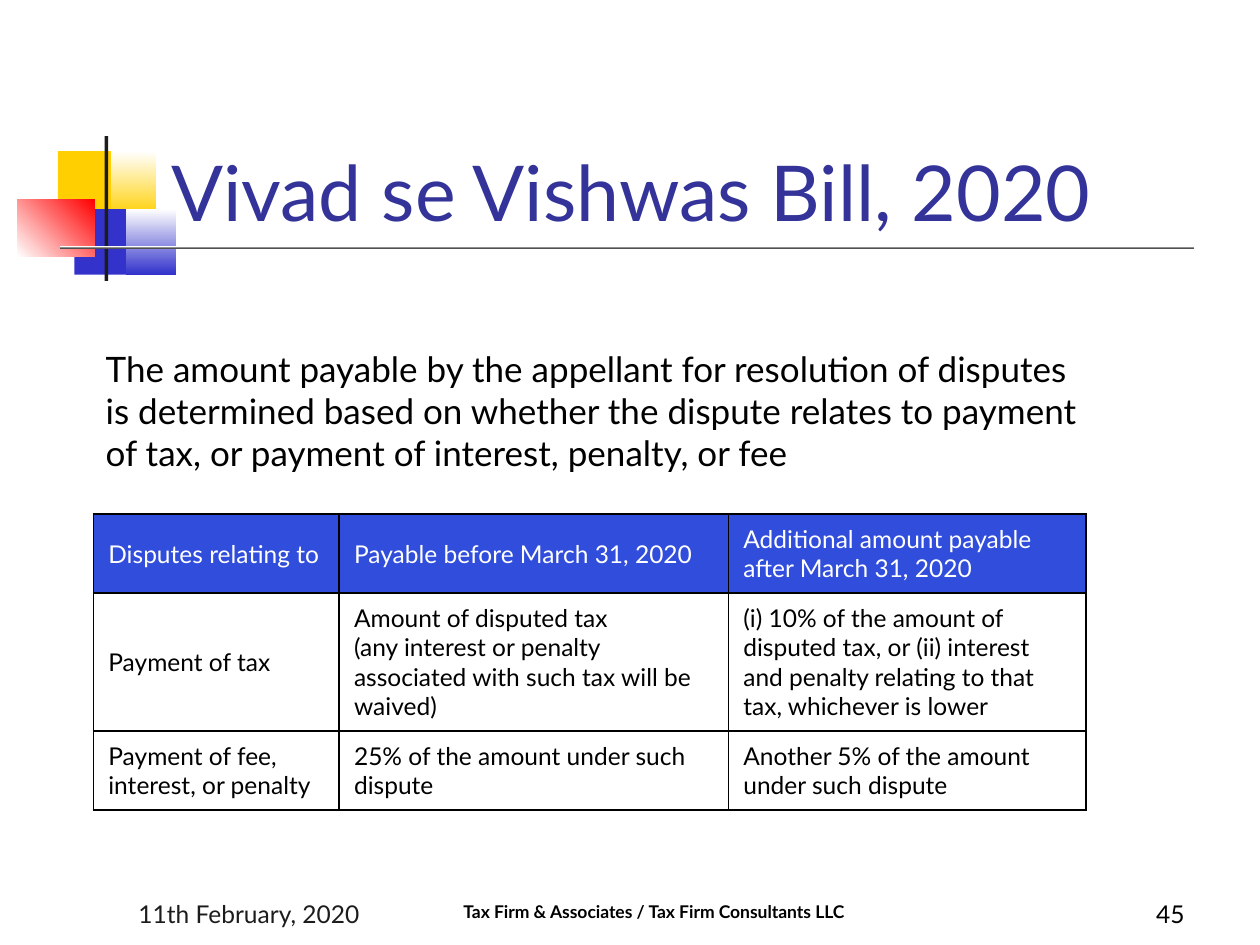
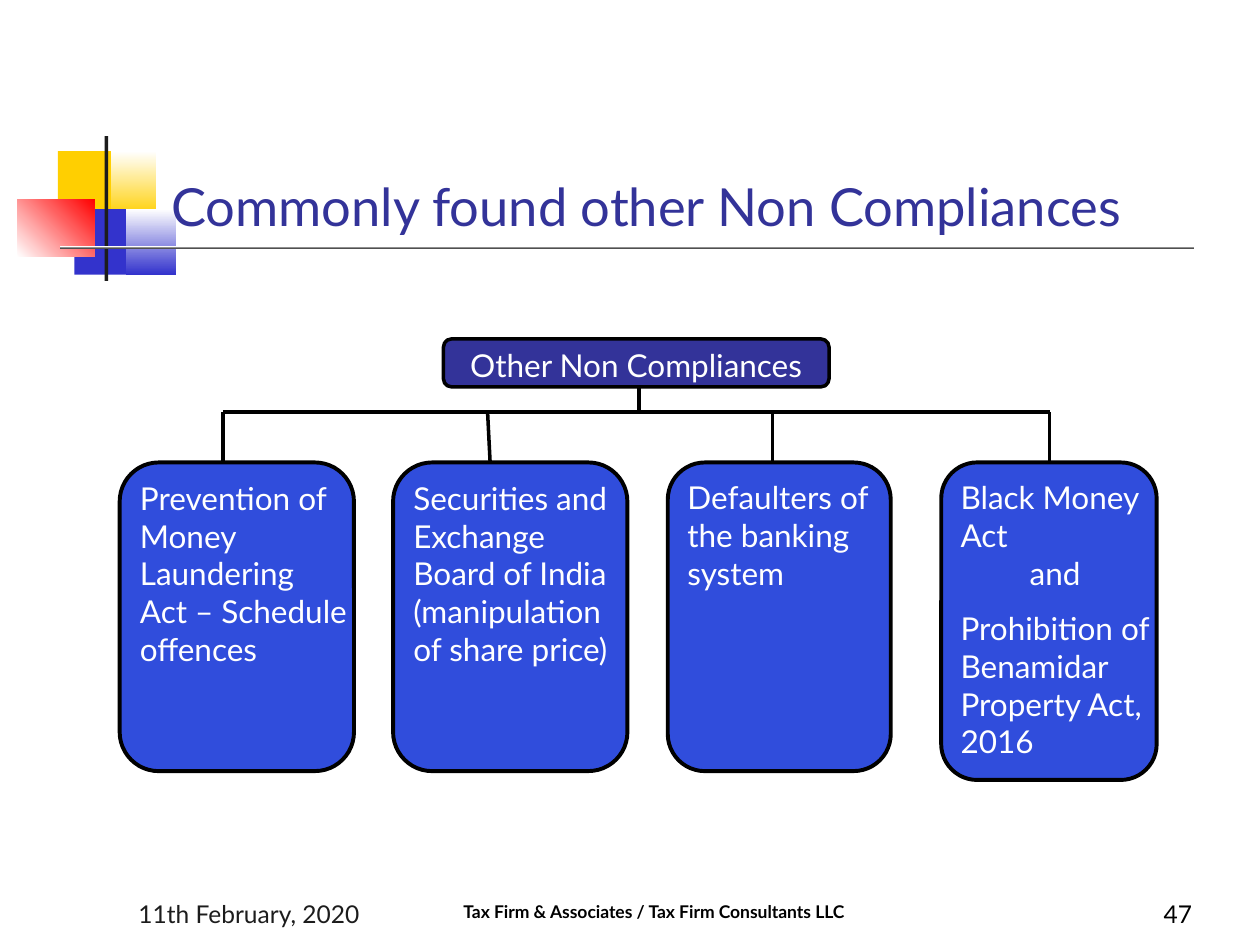
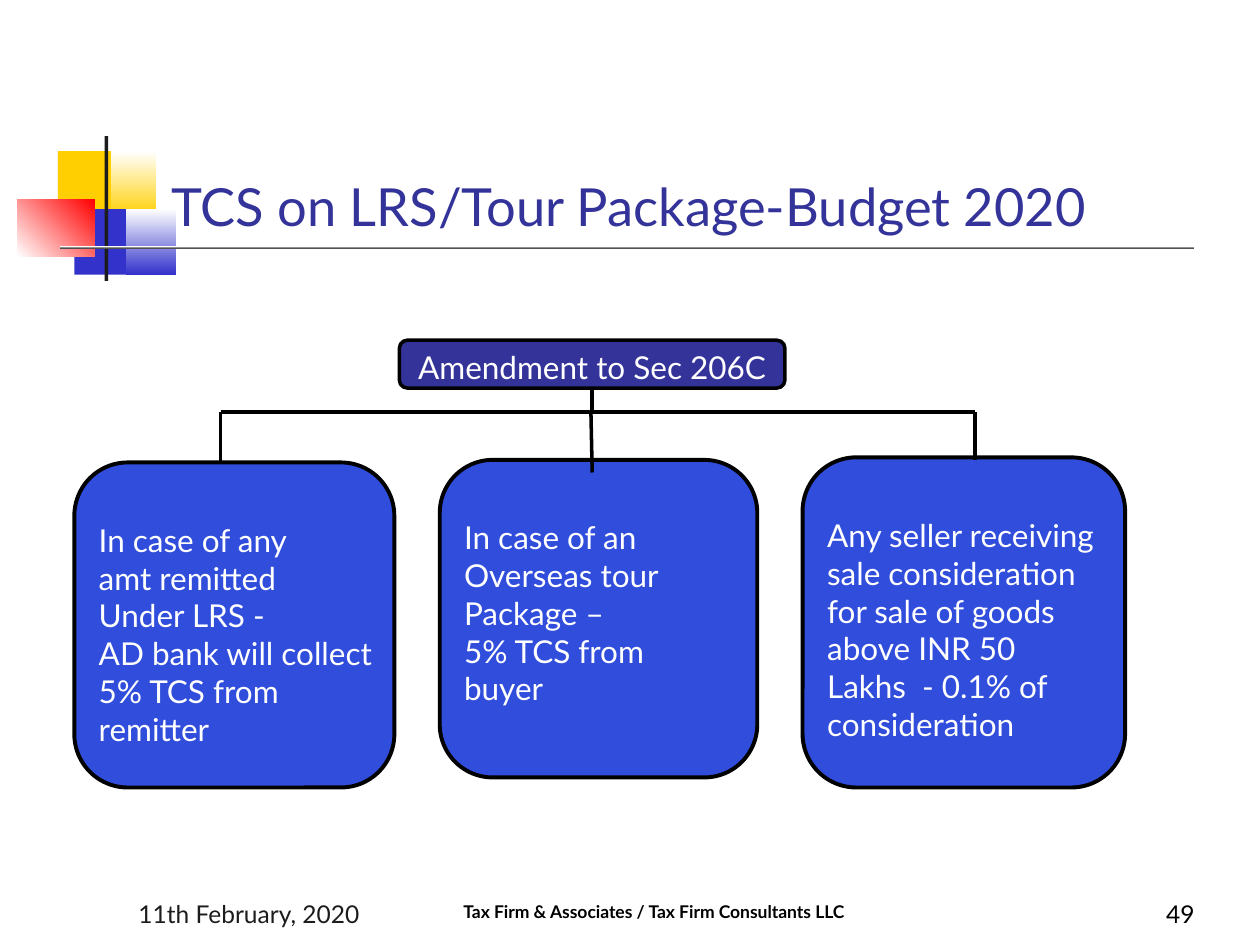
"""Build three slides on tax disputes, other non compliances and TCS changes."""
from dataclasses import dataclass

from lxml.etree import SubElement
from pptx import Presentation
from pptx.dml.color import RGBColor
from pptx.enum.shapes import MSO_CONNECTOR as Link, MSO_SHAPE as Preset
from pptx.enum.text import MSO_ANCHOR as Anchor, PP_ALIGN as Align
from pptx.oxml.ns import qn
from pptx.util import Inches, Pt


@dataclass(frozen=True)
class Theme:
    font: str = "Lato"
    white: str = "FFFFFF"
    black: str = "000000"
    ink: str = "1C1C1C"
    title: str = "333399"
    card: str = "304DDC"
    yellow: str = "FFCF01"
    blue: str = "3333CC"
    red: str = "FF0000"
    headline_size: int = 44
    title_size: int = 30
    body_size: int = 20
    card_size: int = 18
    small_size: int = 14
    firm_size: int = 10
    card_line: float = 2.25
    link_line: float = 2


theme = Theme()
deck = Presentation()
deck.slide_width, deck.slide_height = Inches(10), Inches(7.5)
COL = deck.slide_width // 100
ROW = deck.slide_height // 75
PAD_X, PAD_Y = int(0.7 * COL), int(0.4 * ROW)


def place(*at):
    """Turn alternating columns and rows of the grid into lengths."""
    return [int(step * unit) for step, unit in zip(at, (COL, ROW) * 2)]


def write(frame, text, size, colour, align=Align.LEFT, bold=False):
    """Fill a text frame, one paragraph a line, in a single style."""
    frame.text = text
    for paragraph in frame.paragraphs:
        paragraph.alignment = align
        for run in paragraph.runs:
            run.font.name = theme.font
            run.font.size = Pt(size)
            run.font.bold = bold
            run.font.color.rgb = RGBColor.from_string(colour)


ornament = [
    ((4.6, 12, 4.8, 5.2), theme.yellow, None, 0),
    ((8.8, 12, 3.6, 5.2), theme.yellow, theme.white, 0),
    ((5.9, 16.6, 4.6, 5.2), theme.blue, None, 0),
    ((10, 16.6, 4, 5.2), theme.blue, theme.white, 0),
    ((1.4, 15.8, 6.1, 4.6), theme.white, theme.red, 45),
    ((8.3, 10.8, 0.3, 11.5), theme.ink, None, 0),
    ((4.8, 19.5, 90, 0.3), theme.ink, theme.white, 0),
]
pages = [
    ("Vivad se Vishwas Bill, 2020", theme.headline_size, "45", 74.2),
    ("Commonly found other Non Compliances", theme.title_size, "47", 74.8),
    ("TCS on LRS/Tour Package-Budget 2020", theme.title_size, "49", 75),
]
date = "11th February, 2020"
firm = "Tax Firm & Associates / Tax Firm Consultants LLC"
intro = (
    "The amount payable by the appellant for resolution of disputes is determined "
    "based on whether the dispute relates to payment of tax, or payment of "
    "interest, penalty, or fee"
)

slides = []
for heading, heading_size, number, number_col in pages:
    slide = deck.slides.add_slide(deck.slide_layouts[6])
    slides.append(slide)
    for at, start, end, angle in ornament:
        piece = slide.shapes.add_shape(Preset.RECTANGLE, *place(*at))
        piece.shadow.inherit = False
        piece.line.fill.background()
        if end is None:
            piece.fill.solid()
            piece.fill.fore_color.rgb = RGBColor.from_string(start)
            continue
        piece.fill.gradient()
        if angle:
            piece.fill.gradient_angle = angle
        for stop, colour in zip(piece.fill.gradient_stops, (start, end)):
            stop.color.rgb = RGBColor.from_string(colour)

    passages = [
        ((12.6, 6.8, 85.2, 12.5), Anchor.BOTTOM, (heading, heading_size, theme.title)),
        ((number_col, 69.2, 20.8, 5), Anchor.BOTTOM,
         (number, theme.small_size, theme.black, Align.RIGHT)),
        ((10, 69.2, 20.8, 5), Anchor.BOTTOM, (date, theme.small_size, theme.ink)),
        ((35.8, 71, 50, 2.7), Anchor.TOP,
         (firm, theme.firm_size, theme.black, Align.LEFT, True)),
    ]
    if len(slides) == 1:
        passages.append(((7.4, 27.1, 80.4, 11.1), Anchor.TOP,
                         (intro, theme.body_size, theme.black)))
    for at, anchor, wording in passages:
        frame = slide.shapes.add_textbox(*place(*at)).text_frame
        frame.word_wrap = True
        frame.vertical_anchor = anchor
        write(frame, *wording)

disputes = [
    ["Disputes relating to", "Payable before March 31, 2020",
     "Additional amount payable after March 31, 2020"],
    ["Payment of tax",
     "Amount of disputed tax\n"
     "(any interest or penalty associated with such tax will be waived)",
     "(i) 10% of the amount of disputed tax, or (ii) interest and penalty "
     "relating to that tax, whichever is lower"],
    ["Payment of fee, interest, or penalty", "25% of the amount under such dispute",
     "Another 5% of the amount under such dispute"],
]
amounts = slides[0].shapes.add_table(3, 3, *place(7.4, 40.8, 78.8, 23.4)).table
for column, width in zip(amounts.columns, (19.5, 30.9, 28.4)):
    column.width = int(width * COL)
for row, height in zip(amounts.rows, (6.2, 10.9, 6.2)):
    row.height = int(height * ROW)
for r, entries in enumerate(disputes):
    fill, colour = (theme.white, theme.black) if r else (theme.card, theme.white)
    for c, entry in enumerate(entries):
        cell = amounts.cell(r, c)
        cell.vertical_anchor = Anchor.MIDDLE
        cell.margin_left = cell.margin_right = int(1.2 * COL)
        cell.margin_top = cell.margin_bottom = int(0.8 * ROW)
        write(cell.text_frame, entry, theme.small_size, colour)
        properties = cell._tc.get_or_add_tcPr()
        for side in ("a:lnL", "a:lnR", "a:lnT", "a:lnB"):
            border = SubElement(properties, qn(side), w=str(Pt(1)))
            SubElement(SubElement(border, qn("a:solidFill")), qn("a:srgbClr"),
                       val=theme.black)
        cell.fill.solid()
        cell.fill.fore_color.rgb = RGBColor.from_string(fill)

BUS_ROW = 32.7
trees = [
    (slides[1], "Other Non Compliances", (35.2, 26.9, 30.6, 3.8), 50.7, 0.4,
     [(17.7, 17.7, 36.7), (38.7, 38.9, 36.7), (61.3, 61.3, 36.7), (83.3, 83.3, 36.7)],
     [((9.5, 36.7, 18.6, 24.5),
       "Prevention of\nMoney\nLaundering\nAct – Schedule\noffences"),
      ((31.2, 36.7, 18.6, 24.5),
       "Securities and\nExchange\nBoard of India\n(manipulation\nof share price)"),
      ((53, 36.7, 17.7, 24.5), "Defaulters of\nthe banking\nsystem"),
      ((74.7, 36.7, 17.1, 25.2),
       "Black Money\nAct\nand\nProhibition of\nBenamidar\nProperty Act,\n2016")]),
    (slides[2], "Amendment to Sec 206C", (31.7, 27, 30.6, 3.8), 47, 3.4,
     [(17.5, 17.5, 36.7), (46.9, 47, 37.5), (77.4, 77.4, 36.5)],
     [((5.9, 36.7, 25.4, 25.8),
       "In case of any\namt remitted\nUnder LRS -\nAD bank will collect\n"
       "5% TCS from\nremitter"),
      ((34.9, 36.5, 25.2, 25.2),
       "In case of an\nOverseas tour\nPackage –\n5% TCS from\nbuyer"),
      ((63.7, 36.3, 25.6, 26.2),
       "Any seller receiving\nsale consideration\nfor sale of goods\nabove INR 50\n"
       "Lakhs  - 0.1% of\nconsideration")]),
]
for slide, root, root_at, trunk, card_top, drops, cards in trees:
    nodes = [(at, text, theme.card, theme.card_line, card_top, Align.LEFT)
             for at, text in cards]
    nodes.append((root_at, root, theme.title, theme.link_line, 0.4, Align.CENTER))
    for at, text, fill, line, top, align in nodes:
        node = slide.shapes.add_shape(Preset.ROUNDED_RECTANGLE, *place(*at))
        node.shadow.inherit = False
        node.fill.solid()
        node.fill.fore_color.rgb = RGBColor.from_string(fill)
        node.line.color.rgb = RGBColor.from_string(theme.black)
        node.line.width = Pt(line)
        frame = node.text_frame
        frame.word_wrap = False
        frame.vertical_anchor = Anchor.TOP
        frame.margin_left = frame.margin_right = PAD_X
        frame.margin_top, frame.margin_bottom = int(top * ROW), PAD_Y
        write(frame, text, theme.card_size, theme.white, align)
        for joiner, following in zip(frame.paragraphs, frame.paragraphs[1:]):
            if joiner.text == "and":
                joiner.alignment = Align.CENTER
                following.space_before = Pt(10)

    links = [(trunk, 30.7, trunk, BUS_ROW), (drops[0][0], BUS_ROW, drops[-1][0], BUS_ROW)]
    links += [(start, BUS_ROW, end, bottom) for start, end, bottom in drops]
    for ends in links:
        link = slide.shapes.add_connector(Link.STRAIGHT, *place(*ends))
        link.line.color.rgb = RGBColor.from_string(theme.black)
        link.line.width = Pt(theme.link_line)
        SubElement(link._element.spPr, qn("a:effectLst"))

deck.save("out.pptx")
